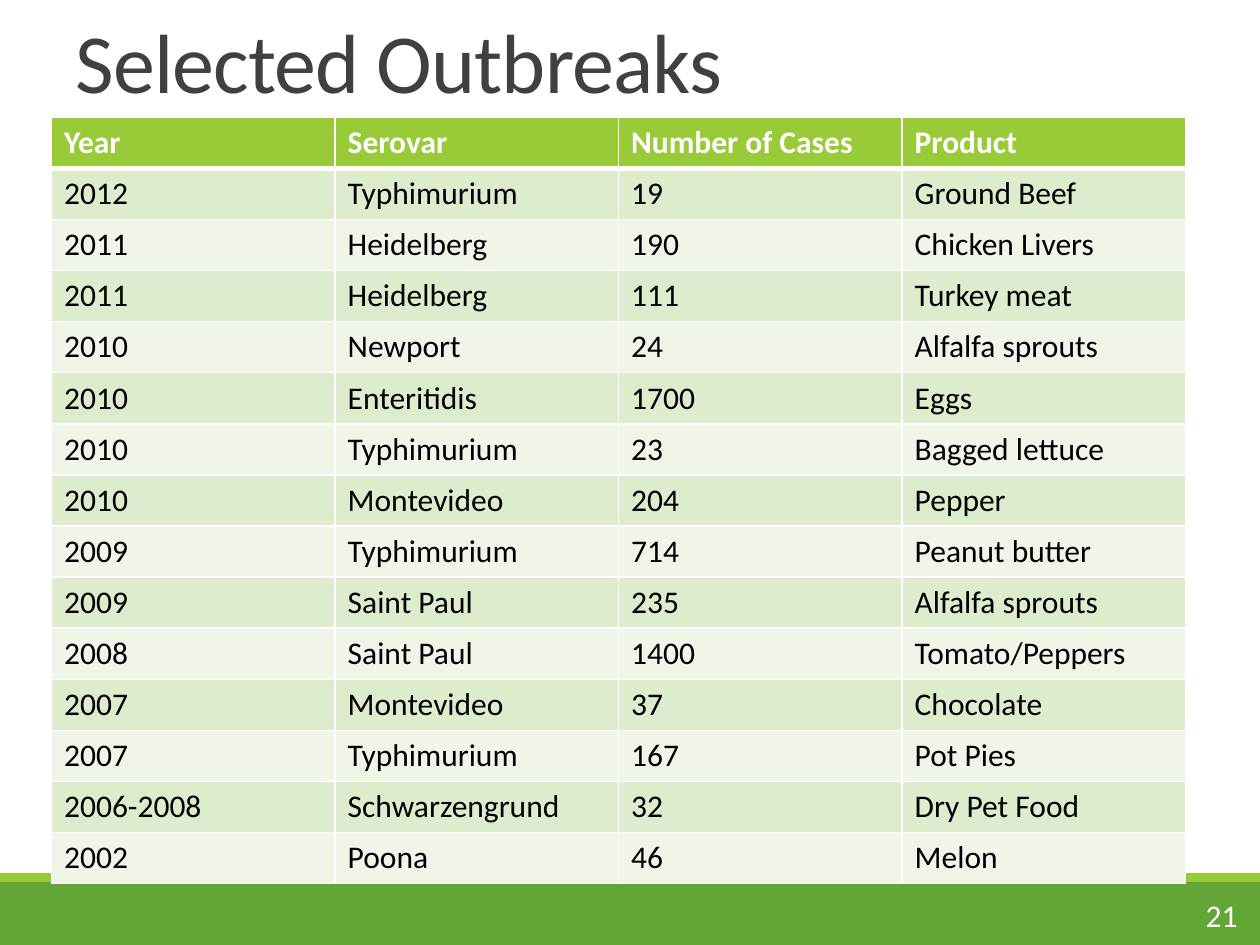
from lxml.etree import SubElement
from pptx import Presentation
from pptx.dml.color import RGBColor
from pptx.enum.shapes import MSO_SHAPE as Shape
from pptx.enum.text import MSO_ANCHOR as Anchor, MSO_AUTO_SIZE as AutoSize, PP_ALIGN as Align
from pptx.oxml import parse_xml
from pptx.oxml.ns import nsdecls, qn
from pptx.util import Pt

WHITE = RGBColor(0xFF, 0xFF, 0xFF)
BLACK = RGBColor(0x00, 0x00, 0x00)
CHARCOAL = RGBColor(0x40, 0x40, 0x40)
GREEN = RGBColor(0x63, 0xA5, 0x37)
LIME = RGBColor(0x99, 0xCB, 0x38)
BAND_DARK = RGBColor(0xDE, 0xEC, 0xCE)
BAND_LIGHT = RGBColor(0xEF, 0xF6, 0xE8)

OUTBREAKS = [
    ("Year", "Serovar", "Number of Cases", "Product"),
    ("2012", "Typhimurium", "19", "Ground Beef"),
    ("2011", "Heidelberg", "190", "Chicken Livers"),
    ("2011", "Heidelberg", "111", "Turkey meat"),
    ("2010", "Newport", "24", "Alfalfa sprouts"),
    ("2010", "Enteritidis", "1700", "Eggs"),
    ("2010", "Typhimurium", "23", "Bagged lettuce"),
    ("2010", "Montevideo", "204", "Pepper"),
    ("2009", "Typhimurium", "714", "Peanut butter"),
    ("2009", "Saint Paul", "235", "Alfalfa sprouts"),
    ("2008", "Saint Paul", "1400", "Tomato/Peppers"),
    ("2007", "Montevideo", "37", "Chocolate"),
    ("2007", "Typhimurium", "167", "Pot Pies"),
    ("2006-2008", "Schwarzengrund", "32", "Dry Pet Food"),
    ("2002", "Poona", "46", "Melon"),
]


def apply(target, formats):
    """Set each attribute named in formats on the target."""
    for name, value in formats.items():
        setattr(target, name, value)


def write(frame, text, color, size, bold=False, **para_formats):
    """Put one formatted run into a text frame and return the run."""
    para = frame.paragraphs[0]
    apply(para, para_formats)
    span = para.add_run()
    span.text = text
    apply(span.font, {"name": "Calibri", "size": Pt(size), "bold": bold})
    span.font.color.rgb = color
    return span


def add_title(page, box, text):
    """Move the title placeholder into the box and fill it."""
    title = page.shapes.title
    apply(title, dict(zip(("left", "top", "width", "height"), map(Pt, box))))
    frame = title.text_frame
    apply(frame, {"auto_size": AutoSize.NONE, "vertical_anchor": Anchor.BOTTOM, "word_wrap": True})
    span = write(frame, text, CHARCOAL, 48, alignment=Align.LEFT, line_spacing=0.85)
    span.font._element.set("spc", "-50")


def add_footer(page, box, number):
    """Draw the two footer bars and the page number inside the box."""
    left, top, width, height = box
    stripe = 5
    bars = [(top, stripe, LIME), (top + stripe, height - stripe, GREEN)]
    for bar_top, bar_height, color in bars:
        bar = page.shapes.add_shape(
            Shape.RECTANGLE, Pt(left), Pt(bar_top), Pt(width), Pt(bar_height))
        bar.shadow.inherit = False
        bar.fill.solid()
        bar.fill.fore_color.rgb = color
        bar.line.fill.background()
    label = page.shapes.add_textbox(
        Pt(left + width - 83.5), Pt(top + 9.5), Pt(77.75), Pt(28.75))
    frame = label.text_frame
    apply(frame, {"word_wrap": True, "vertical_anchor": Anchor.MIDDLE})
    write(frame, number, WHITE, 18, alignment=Align.RIGHT)


def set_borders(cell, widths):
    """Give the cell white borders of the stated widths in points."""
    properties = cell._tc.get_or_add_tcPr()
    for position, (side, width) in enumerate(widths.items()):
        edge = parse_xml(f'<a:ln{side} {nsdecls("a")} w="{Pt(width)}"/>')
        fill = SubElement(edge, qn("a:solidFill"))
        SubElement(fill, qn("a:srgbClr")).set("val", str(WHITE))
        properties.insert(position, edge)


def add_outbreak_table(page, box, records):
    """Fill the box with a banded table whose first record is the header."""
    left, top, width, height = box
    rows, columns = len(records), len(records[0])
    table = page.shapes.add_table(
        rows, columns, Pt(left), Pt(top), Pt(width), Pt(height)).table
    for column in table.columns:
        column.width = Pt(width / columns)
    for row_index, record in enumerate(records):
        table.rows[row_index].height = Pt(height / rows)
        header = row_index == 0
        band = LIME if header else BAND_DARK if row_index % 2 else BAND_LIGHT
        widths = {"L": 1, "R": 1, "T": 3 if row_index == 1 else 1, "B": 3 if header else 1}
        for column_index, text in enumerate(record):
            cell = table.cell(row_index, column_index)
            apply(cell, {"margin_left": Pt(7.2), "margin_right": Pt(7.2),
                         "margin_top": Pt(3.6), "margin_bottom": Pt(3.6)})
            cell.fill.solid()
            cell.fill.fore_color.rgb = band
            set_borders(cell, widths)
            write(cell.text_frame, text, WHITE if header else BLACK, 18, header)


def main():
    """Build and save the deck."""
    deck = Presentation()
    apply(deck, {"slide_width": Pt(720), "slide_height": Pt(540)})
    page = deck.slides.add_slide(deck.slide_layouts[5])
    add_title(page, (36, -23, 648, 90), "Selected Outbreaks")
    add_footer(page, (0, 499, 720, 41), "21")
    add_outbreak_table(page, (29.5, 67, 648, 438), OUTBREAKS)
    deck.save("out.pptx")


if __name__ == "__main__":
    main()
